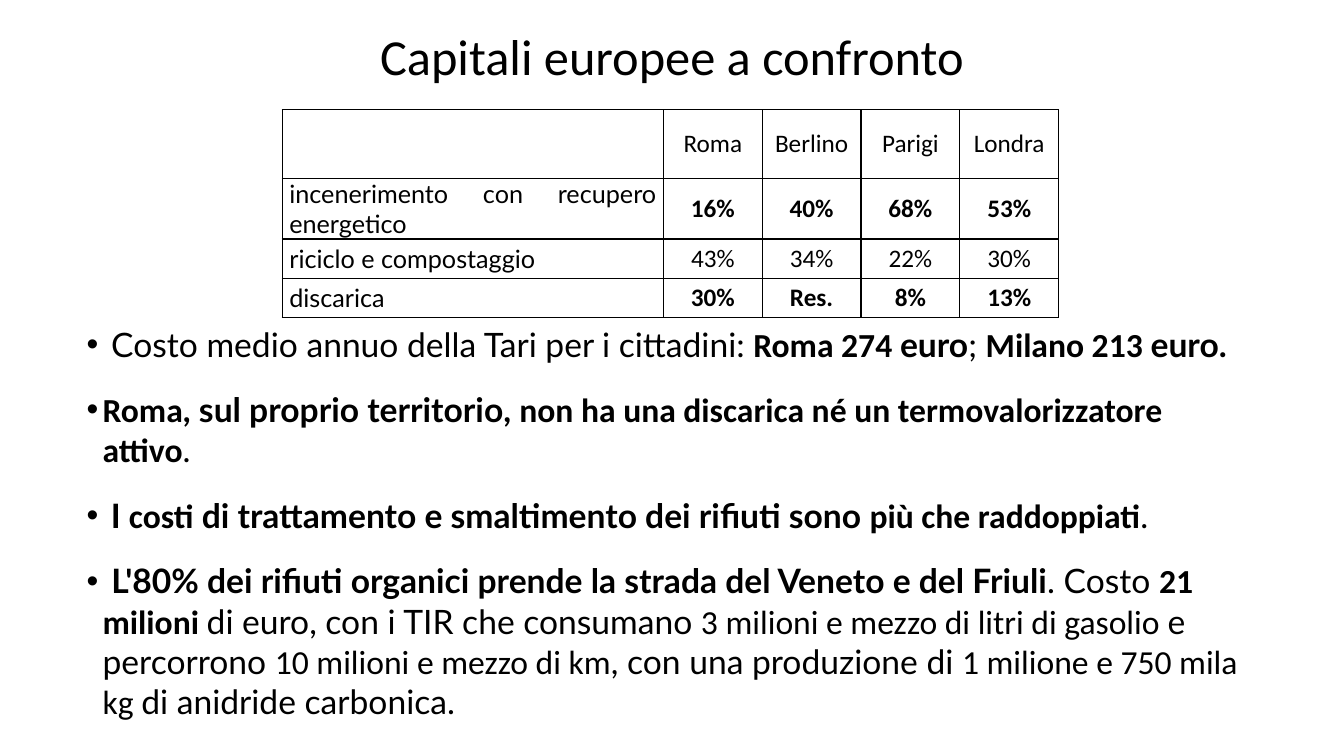
from pptx import Presentation
from pptx.dml.color import RGBColor
from pptx.enum.text import MSO_ANCHOR, MSO_AUTO_SIZE, PP_ALIGN
from pptx.oxml import parse_xml
from pptx.oxml.ns import nsdecls
from pptx.util import Inches, Pt

BLACK = RGBColor(0, 0, 0)
CAL, LATO = "Calibri", "Lato"

COLS = [3.78] + [0.98] * 4
ROWS = [0.68, 0.6, 0.39, 0.39]
DATA = [
    ["", "Roma", "Berlino", "Parigi", "Londra"],
    ["incenerimento con recupero energetico", "16%", "40%", "68%", "53%"],
    ["riciclo e compostaggio", "43%", "34%", "22%", "30%"],
    ["discarica", "30%", "Res.", "8%", "13%"],
]
BOLD = (1, 3)

POINTS = [
    [(" Costo medio annuo della Tari per i cittadini: ", LATO, False),
     ("Roma 274 ", CAL, True), ("euro", LATO, True), ("; ", LATO, False),
     ("Milano 213 ", CAL, True), ("euro.", LATO, True)],
    [("Roma", CAL, True), (", sul proprio territorio, ", LATO, True),
     ("non ha una discarica né un termovalorizzatore attivo", CAL, True),
     (".", LATO, False)],
    [(" I ", LATO, True), ("costi", CAL, True),
     (" di trattamento e smaltimento dei rifiuti sono ", LATO, True),
     ("più che raddoppiati", CAL, True), (".", LATO, False)],
    [(" ", LATO, False),
     ("L'80% dei rifiuti organici prende la strada del Veneto e del Friuli", LATO, True),
     (". Costo ", LATO, False), ("21 milioni ", CAL, True),
     ("di euro, con i TIR che consumano ", LATO, False),
     ("3 milioni e mezzo di litri di gasolio ", CAL, False),
     ("e percorrono ", LATO, False), ("10 milioni e mezzo di km", CAL, False),
     (", con una produzione di ", LATO, False),
     ("1 milione e 750 mila kg ", CAL, False),
     ("di anidride carbonica.", LATO, False)],
]


def apply(item, form):
    for key, val in form.items():
        setattr(item, key, val)


def add_run(para, text, name, size, bold=False):
    run = para.add_run()
    run.text = text
    apply(run.font, {"name": name, "size": Pt(size), "bold": bold})
    run.font.color.rgb = BLACK


def place(shape, box):
    apply(shape, dict(zip(("left", "top", "width", "height"), map(Inches, box))))


def add_title(slide, box):
    title = slide.shapes.title
    place(title, box)
    pad = Inches(0.08)
    frame = title.text_frame
    apply(frame, {
        "word_wrap": True, "auto_size": MSO_AUTO_SIZE.NONE,
        "vertical_anchor": MSO_ANCHOR.MIDDLE,
        "margin_left": pad, "margin_right": pad,
        "margin_top": pad, "margin_bottom": pad})
    para = frame.paragraphs[0]
    apply(para, {"alignment": PP_ALIGN.CENTER, "line_spacing": 0.9})
    add_run(para, "Capitali europee a confronto", CAL, 36)


def add_edges(cell):
    props = cell._tc.get_or_add_tcPr()
    for spot, side in enumerate("LRTB"):
        props.insert(spot, parse_xml(
            f'<a:ln{side} {nsdecls("a")} w="12700"><a:solidFill>'
            f'<a:srgbClr val="{BLACK}"/></a:solidFill></a:ln{side}>'))


def add_grid(slide, box):
    grid = slide.shapes.add_table(len(ROWS), len(COLS), *map(Inches, box)).table
    apply(grid, {"first_row": False, "horz_banding": False})
    for col, width in zip(grid.columns, COLS):
        col.width = Inches(width)
    for row, height in zip(grid.rows, ROWS):
        row.height = Inches(height)
    for r, line in enumerate(DATA):
        for c, text in enumerate(line):
            cell = grid.cell(r, c)
            apply(cell, {
                "vertical_anchor": MSO_ANCHOR.MIDDLE,
                "margin_left": Inches(0.07), "margin_right": Inches(0.07),
                "margin_top": 0, "margin_bottom": 0})
            cell.fill.background()
            add_edges(cell)
            if text:
                para = cell.text_frame.paragraphs[0]
                para.alignment = PP_ALIGN.CENTER if c else PP_ALIGN.JUSTIFY
                add_run(para, text, CAL if c else LATO, 18, c > 0 and r in BOLD)


def add_points(slide, box):
    frame = slide.shapes.add_textbox(*map(Inches, box)).text_frame
    apply(frame, {"word_wrap": True, "auto_size": MSO_AUTO_SIZE.NONE})
    for n, runs in enumerate(POINTS):
        para = frame.add_paragraph() if n else frame.paragraphs[0]
        props = para._p.get_or_add_pPr()
        props.set("marL", str(Inches(0.16)))
        props.set("indent", str(Inches(-0.16)))
        props.append(parse_xml(f'<a:buFont {nsdecls("a")} typeface="Arial"/>'))
        props.append(parse_xml(f'<a:buChar {nsdecls("a")} char="•"/>'))
        if n:
            para.space_before = Pt(18)
        for text, name, bold in runs:
            add_run(para, text, name, 24, bold)


def main():
    deck = Presentation()
    apply(deck, {"slide_width": Inches(13.33), "slide_height": Inches(7.5)})
    slide = deck.slides.add_slide(deck.slide_layouts[5])
    add_title(slide, (0.76, 0.39, 11.81, 0.39))
    add_grid(slide, (2.8, 1.09, sum(COLS), sum(ROWS)))
    add_points(slide, (0.76, 3.16, 11.81, 3.66))
    deck.save("out.pptx")


if __name__ == "__main__":
    main()
